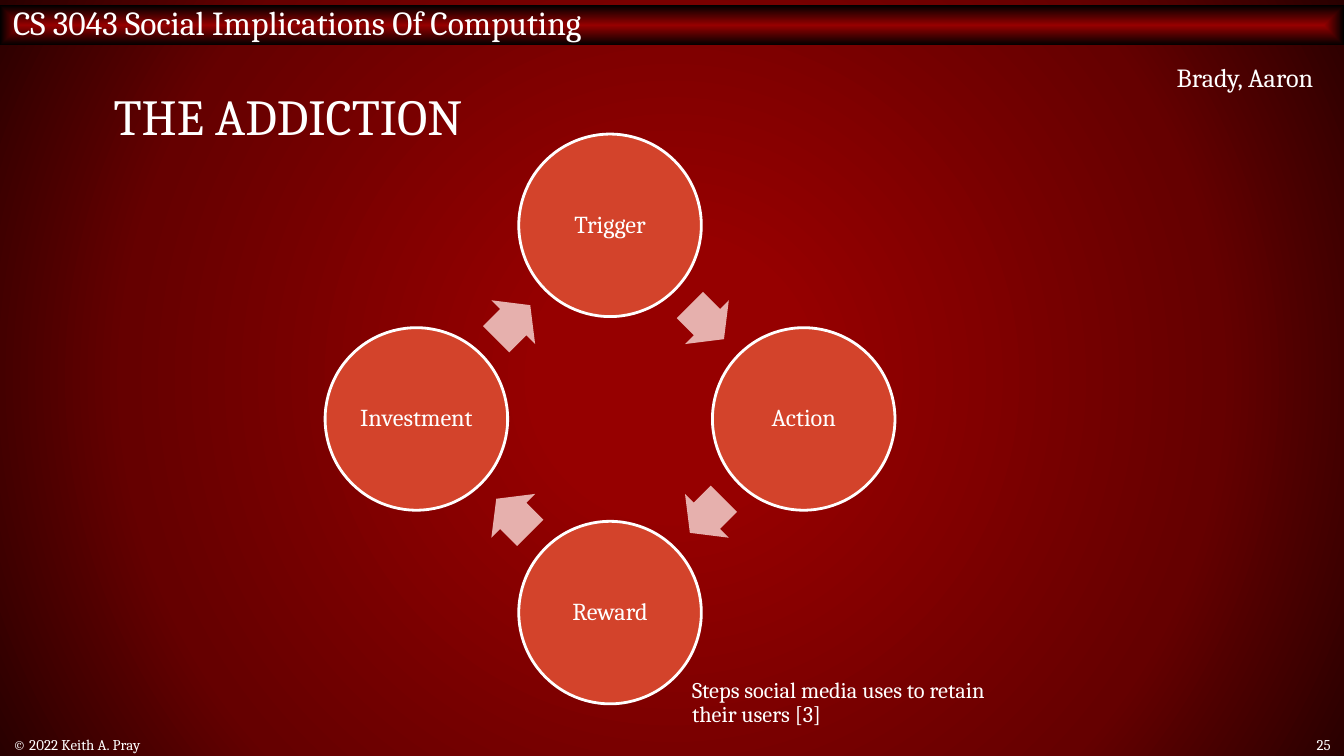
"""Build the slide "The Addiction": a four-step cycle on a dark red background."""
from dataclasses import dataclass
from math import cos, radians, sin

from pptx import Presentation
from pptx.dml.color import RGBColor
from pptx.enum.shapes import MSO_SHAPE
from pptx.enum.text import MSO_ANCHOR, PP_ALIGN
from pptx.oxml import parse_xml
from pptx.oxml.ns import nsdecls, qn
from pptx.util import Cm, Pt


@dataclass(frozen=True)
class Theme:
    font: str = "Cambria"
    white: str = "FFFFFF"
    circle: str = "D3432B"
    arrow: str = "E6B0AD"
    glow: tuple = ((17, "960000"), (71, "650000"), (100, "290000"))
    banner: tuple = ((0, "960000"), (100, "000000"))
    title: float = 27
    course: float = 18
    author: float = 14
    step: float = 13
    caption: float = 12
    footer: float = 8


theme = Theme()


def write_text(box, text, size, align=PP_ALIGN.LEFT, anchor=MSO_ANCHOR.MIDDLE,
               spacing=1.0, margins=(0.25, 0.13, 0.25, 0.13)):
    """Fill a shape or text box with one formatted paragraph."""
    frame = box.text_frame
    frame.word_wrap = True
    frame.vertical_anchor = anchor
    (frame.margin_left, frame.margin_top,
     frame.margin_right, frame.margin_bottom) = map(Cm, margins)
    para = frame.paragraphs[0]
    para.alignment = align
    para.line_spacing = spacing
    span = para.add_run()
    span.text = text
    span.font.name = theme.font
    span.font.size = Pt(size)
    span.font.color.rgb = RGBColor.from_string(theme.white)


def fill_gradient(fill, element, stops, path_kind):
    """Give an element a gradient that spreads from its centre."""
    fill.solid()
    solid = element.find(".//" + qn("a:solidFill"))
    marks = "".join(f'<a:gs pos="{place * 1000}"><a:srgbClr val="{color}"/></a:gs>'
                    for place, color in stops)
    gradient = parse_xml(
        f'<a:gradFill {nsdecls("a")} rotWithShape="1"><a:gsLst>{marks}</a:gsLst>'
        f'<a:path path="{path_kind}">'
        '<a:fillToRect l="50000" t="50000" r="50000" b="50000"/></a:path></a:gradFill>')
    solid.getparent().replace(solid, gradient)


deck = Presentation()
deck.slide_width, deck.slide_height = Cm(25.4), Cm(14.29)
page = deck.slides.add_slide(deck.slide_layouts[6])
fill_gradient(page.background.fill, page.element, theme.glow, "circle")

banner = page.shapes.add_shape(MSO_SHAPE.RECTANGLE, 0, Cm(0.1), deck.slide_width, Cm(0.76))
banner.shadow.inherit = False
banner.line.fill.background()
fill_gradient(banner.fill, banner.element, theme.banner, "shape")
write_text(banner, "CS 3043 Social Implications Of Computing", theme.course,
           margins=(0.25, 0, 0.25, 0.13))

right, top = PP_ALIGN.RIGHT, MSO_ANCHOR.TOP
labels = [
    ("THE ADDICTION", (1.9, 1.02, 21.59, 2.54), dict(size=theme.title, spacing=0.8)),
    ("© 2022 Keith A. Pray", (0, 13.87, 15.44, 0.41), dict(size=theme.footer)),
    ("25", (23.67, 13.87, 1.73, 0.41), dict(size=theme.footer, align=right)),
    ("Brady, Aaron", (19.02, 1.04, 6.05, 0.86),
     dict(size=theme.author, align=right, anchor=top)),
    ("Steps social media uses to retain their users [3]", (12.83, 12.7, 6.73, 1.65),
     dict(size=theme.caption, anchor=top, spacing=0.9)),
]
for text, place, style in labels:
    write_text(page.shapes.add_textbox(*map(Cm, place)), text, **style)

center_x, center_y, radius = 11.53, 7.92, 3.66
diameter = 3.45
arrow_width, arrow_height = 0.91, 1.17
arrow_radius = radius * cos(radians(45))

for index, step in enumerate(["Trigger", "Action", "Reward", "Investment"]):
    angle = radians(90 * index - 90)
    circle = page.shapes.add_shape(
        MSO_SHAPE.OVAL,
        Cm(center_x + radius * cos(angle) - diameter / 2),
        Cm(center_y + radius * sin(angle) - diameter / 2),
        Cm(diameter), Cm(diameter))
    circle.shadow.inherit = False
    circle.fill.solid()
    circle.fill.fore_color.rgb = RGBColor.from_string(theme.circle)
    circle.line.color.rgb = RGBColor.from_string(theme.white)
    circle.line.width = Pt(1.5)
    write_text(circle, step, theme.step, align=PP_ALIGN.CENTER, spacing=0.9,
               margins=(0.05, 0.05, 0.05, 0.05))

    between = angle + radians(45)
    arrow = page.shapes.add_shape(
        MSO_SHAPE.RIGHT_ARROW,
        Cm(center_x + arrow_radius * cos(between) - arrow_width / 2),
        Cm(center_y + arrow_radius * sin(between) - arrow_height / 2),
        Cm(arrow_width), Cm(arrow_height))
    arrow.shadow.inherit = False
    arrow.adjustments[0], arrow.adjustments[1] = 0.6, 0.5
    arrow.rotation = 45 + 90 * index
    arrow.fill.solid()
    arrow.fill.fore_color.rgb = RGBColor.from_string(theme.arrow)
    arrow.line.fill.background()

deck.save("out.pptx")
